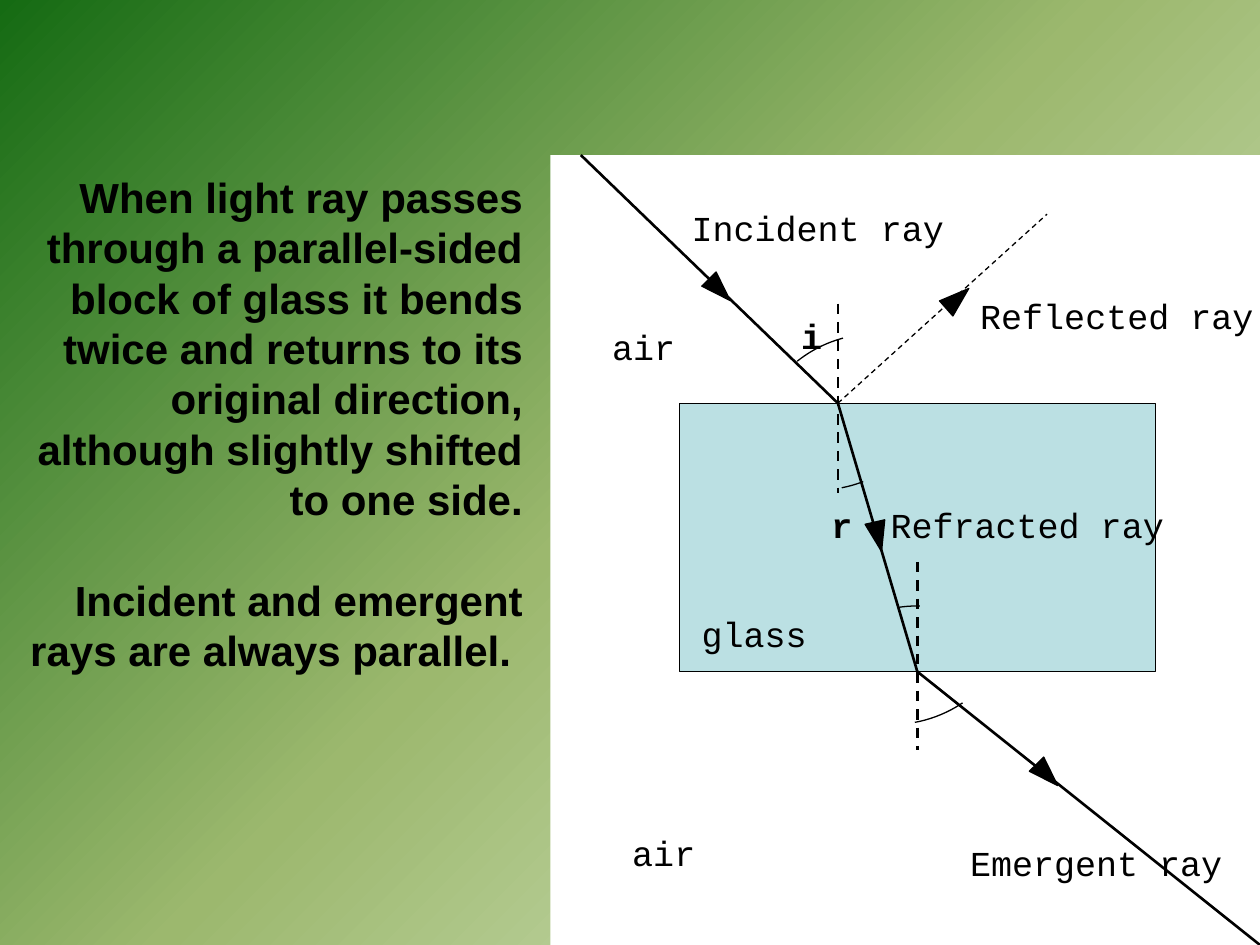
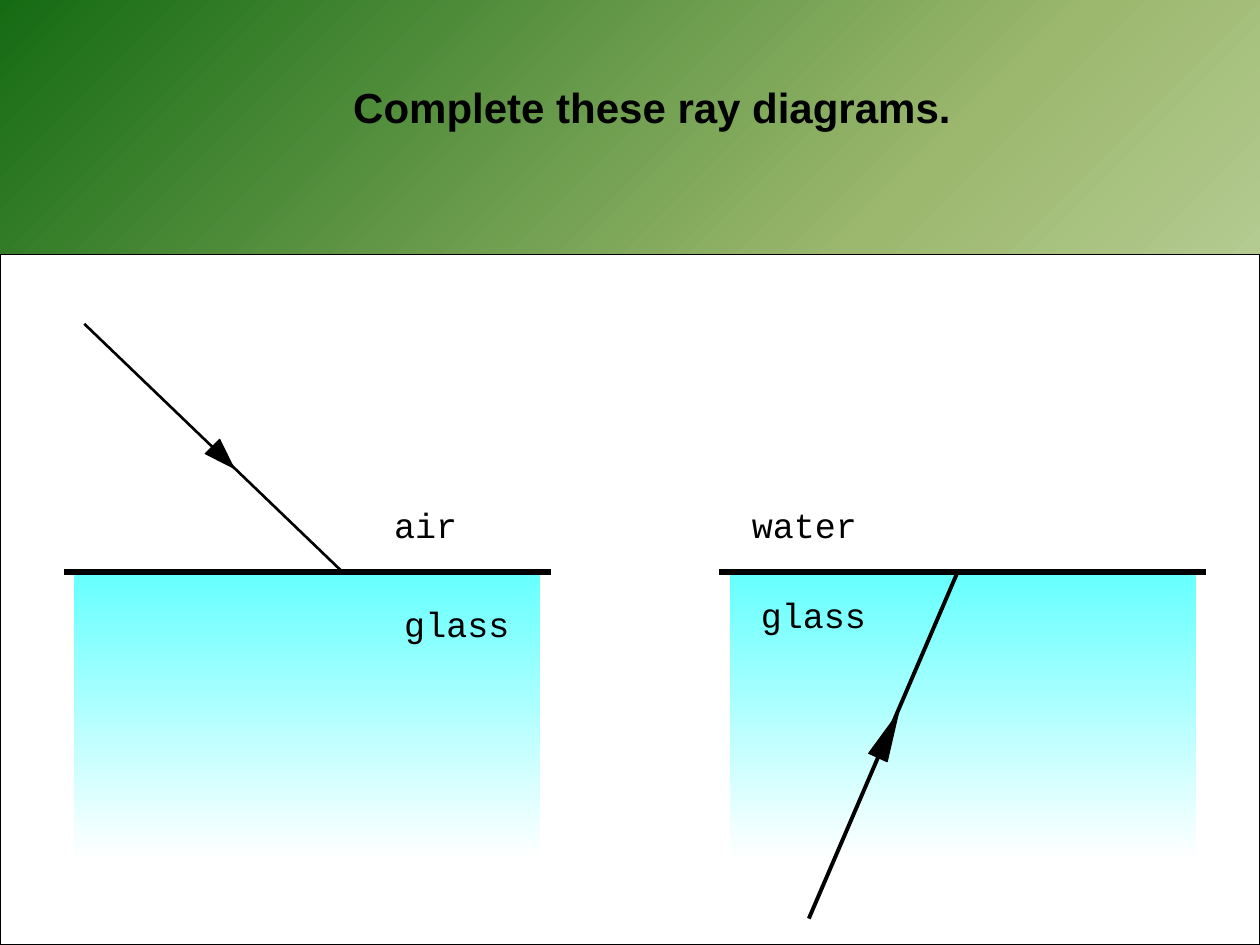
from lxml import etree
from pptx import Presentation
from pptx.dml.color import RGBColor
from pptx.enum.dml import MSO_LINE
from pptx.enum.shapes import MSO_CONNECTOR, MSO_SHAPE
from pptx.enum.text import MSO_ANCHOR, MSO_AUTO_SIZE, PP_ALIGN
from pptx.oxml import parse_xml
from pptx.oxml.ns import nsdecls, qn
from pptx.util import Pt

BLACK = RGBColor(0x00, 0x00, 0x00)
WHITE = RGBColor(0xFF, 0xFF, 0xFF)
GLASS_BLUE = RGBColor(0xBB, 0xE0, 0xE3)
CYAN = RGBColor(0x66, 0xFF, 0xFF)
PALE_GREEN = RGBColor(0xDD, 0xEB, 0xCF)
SAGE = RGBColor(0x9C, 0xB8, 0x6E)
DARK_GREEN = RGBColor(0x15, 0x6B, 0x13)

TEXT_FONT, LABEL_FONT = "Arial", "Courier New"
STRAIGHT = MSO_CONNECTOR.STRAIGHT
DASH = MSO_LINE.DASH
RECTANGLE, TRIANGLE, ARC = MSO_SHAPE.RECTANGLE, MSO_SHAPE.ISOSCELES_TRIANGLE, MSO_SHAPE.ARC
TOP = MSO_ANCHOR.TOP
NO_AUTOFIT = MSO_AUTO_SIZE.NONE
RIGHT, CENTER = PP_ALIGN.RIGHT, PP_ALIGN.CENTER

SLIDE_WIDTH, SLIDE_HEIGHT = 720, 540
CONTENT_LAYOUT, TITLE_ONLY_LAYOUT = 1, 5
BOTTOM_SIDE = 2
LINE_HEIGHT = 28.8
ARC_RADIUS = 72


class Canvas:
    """Draws on a slide, in points from the given corner."""

    def __init__(self, slide, left, top):
        self.shapes = slide.shapes
        self.left, self.top = left, top

    def place(self, x, y):
        return Pt(self.left + x), Pt(self.top + y)

    def shape(self, kind, x, y, width, height, fill=None, line=None):
        shape = self.shapes.add_shape(kind, *self.place(x, y), Pt(width), Pt(height))
        shape.shadow.inherit = False
        if fill is None:
            shape.fill.background()
        else:
            shape.fill.solid()
            shape.fill.fore_color.rgb = fill
        if line is None:
            shape.line.fill.background()
        else:
            shape.line.color.rgb = line
            shape.line.width = Pt(0.75)
        return shape

    def line(self, start, end, width=1.5, dash=None):
        line = self.shapes.add_connector(STRAIGHT, *self.place(*start), *self.place(*end))
        line.line.color.rgb = BLACK
        line.line.width = Pt(width)
        if dash is not None:
            line.line.dash_style = dash
        etree.SubElement(line._element.spPr, qn("a:effectLst"))
        return line

    def arrowhead(self, x, y, rotation, height=17.2):
        self.shape(TRIANGLE, x, y, 11.5, height, BLACK, BLACK).rotation = rotation

    def angle_arc(self, center_x, center_y, start, end):
        arc = self.shape(ARC, center_x - ARC_RADIUS, center_y - ARC_RADIUS,
                         2 * ARC_RADIUS, 2 * ARC_RADIUS, line=BLACK)
        # Angles are stored in 1/60000 degree, adjustments in units of 100000
        arc.adjustments[0] = start * 0.6
        arc.adjustments[1] = end * 0.6

    def label(self, text, x, y, width=181.4, bold=False):
        box = self.shapes.add_textbox(*self.place(x, y), Pt(width), Pt(31))
        frame = box.text_frame
        frame.word_wrap = True
        frame.margin_top = Pt(6.5)
        paragraph = frame.paragraphs[0]
        paragraph.text = text
        set_font(paragraph, LABEL_FONT, 20, bold)


def set_font(paragraph, name, size, bold):
    font = paragraph.font
    font.name, font.size, font.bold = name, Pt(size), bold
    font.color.rgb = BLACK


def set_background(master):
    """Diagonal green gradient shared by all slides."""
    master.background.fill.gradient()
    gradient = next(master._element.iter(qn("p:bgPr"))).find(qn("a:gradFill"))
    stops = "".join(
        f'<a:gs pos="{position}"><a:srgbClr val="{color}"/></a:gs>'
        for position, color in ((0, PALE_GREEN), (50000, SAGE), (100000, DARK_GREEN)))
    gradient.getparent().replace(gradient, parse_xml(
        f'<a:gradFill rotWithShape="1" {nsdecls("a")}><a:gsLst>{stops}</a:gsLst>'
        '<a:path path="circle"><a:fillToRect l="100000" t="100000"/></a:path></a:gradFill>'))


def fill_placeholder(placeholder, texts, left, top, width, height, alignment):
    placeholder.left, placeholder.top = Pt(left), Pt(top)
    placeholder.width, placeholder.height = Pt(width), Pt(height)
    frame = placeholder.text_frame
    frame.text = "\n".join(texts)
    frame.word_wrap = True
    frame.auto_size = NO_AUTOFIT
    frame.vertical_anchor = TOP
    for index, paragraph in enumerate(frame.paragraphs):
        paragraph.alignment = alignment
        paragraph.line_spacing = Pt(LINE_HEIGHT)
        paragraph.space_before = Pt(LINE_HEIGHT if index else 0)
        set_font(paragraph, TEXT_FONT, 24, True)
        properties = paragraph._p.get_or_add_pPr()
        properties.set("marL", "0")
        properties.set("indent", "0")
        # buNone must come before the default run properties
        properties.find(qn("a:defRPr")).addprevious(
            etree.Element(qn("a:buNone")))


def draw_glass_block(slide, left, top, width, height):
    """Ray passing through a parallel-sided block."""
    canvas = Canvas(slide, left, top)
    canvas.shape(RECTANGLE, 0, 0, width, height, WHITE)
    block = canvas.shape(RECTANGLE, 73.5, 141.8, 272.2, 153.4, GLASS_BLUE, BLACK)
    entry, leaving = (164.2, 141.8), (209.6, 295.2)

    # Rays
    canvas.line((17.3, 0), entry)
    refracted = canvas.line(entry, leaving)
    refracted.end_connect(block, BOTTOM_SIDE)
    emergent = canvas.line(leaving, (width, height))
    emergent.begin_connect(block, BOTTOM_SIDE)
    canvas.line(entry, (283.7, 33.8), 0.75, DASH)

    # Normals
    for x, start, end in ((entry[0], 84.9, 192.9), (leaving[0], 232.5, 339.8)):
        canvas.line((x, start), (x, end), dash=DASH)

    for x, y, rotation in ((90.8, 68.4, 135.4), (278, 345.6, 135.4),
                           (181.5, 209.5, 167.2), (226.8, 73.4, 48.5)):
        canvas.arrowhead(x, y, rotation)

    # Angle marks
    for center_x, center_y, start, end in (
            (185.8, 174.2, 231.5, 255), (152.7, 119.5, 68.8, 79),
            (209.6, 329.7, 260.8, 271.2), (195.2, 253.4, 56, 79.6)):
        canvas.angle_arc(center_x, center_y, start, end)
    canvas.label("i", 136.1, 84.9, 28, True)
    canvas.label("r", 153.4, 192.9, 28, True)

    for text, x, y in (
            ("Incident ray", 73.5, 23), ("Emergent ray", 232.6, 385.9),
            ("Refracted ray", 187.2, 192.9), ("Reflected ray", 238.4, 73.4),
            ("air", 28.1, 90.7), ("air", 39.6, 380.1), ("glass", 79.2, 254.8)):
        canvas.label(text, x, y)


def draw_glass_surface(slide, left, surface, labels, ray, ray_width, head):
    """Ray meeting a glass surface; heights are measured from the surface."""
    canvas = Canvas(slide, left, surface)
    glass = canvas.shape(RECTANGLE, 5.8, 0, 266.4, 164.2, CYAN)
    glass.fill.gradient()
    glass.fill.gradient_angle = 270
    for stop, color, position in zip(glass.fill.gradient_stops, (CYAN, WHITE), (0, 1)):
        stop.color.rgb = color
        stop.position = position
    canvas.line((0, 0), (278, 0), 3)
    canvas.line(*ray, ray_width)
    canvas.arrowhead(*head)
    for text, x, y in labels:
        canvas.label(text, x, y)


def add_block_slide(presentation):
    slide = presentation.slides.add_slide(presentation.slide_layouts[CONTENT_LAYOUT])
    title = slide.shapes.title._element
    title.getparent().remove(title)
    fill_placeholder(slide.placeholders[1], (
        "When light ray passes through a parallel-sided block of glass it bends twice "
        "and returns to its original direction, although slightly shifted to one side.",
        "Incident and emergent rays are always parallel. "), 0, 94.3, 306, 298, RIGHT)
    draw_glass_block(slide, 314.6, 88.6, 405.4, 451.4)


def add_exercise_slide(presentation):
    slide = presentation.slides.add_slide(presentation.slide_layouts[TITLE_ONLY_LAYOUT])
    fill_placeholder(slide.shapes.title, ("Complete these ray diagrams.",),
                     121.7, 43.2, 501.8, 36, CENTER)
    Canvas(slide, 0, 145.4).shape(RECTANGLE, 0, 0, SLIDE_WIDTH, 394.6, WHITE, BLACK)
    draw_glass_surface(slide, 36.7, 326.9,
                       (("air", 181.4, -45.4), ("glass", 187.2, 10.8)),
                       ((11.5, -141.8), (159.1, 0)), 1.5, (85, -74.2, 135.4))
    draw_glass_surface(slide, 411.1, 326.9,
                       (("water", 11.5, -45.4), ("glass", 16.6, 5.8)),
                       ((51.1, 198), (136.1, 0)), 2.25, (90.7, 79.2, 24.6, 28))


def main():
    presentation = Presentation()
    presentation.slide_width, presentation.slide_height = Pt(SLIDE_WIDTH), Pt(SLIDE_HEIGHT)
    set_background(presentation.slide_master)
    add_block_slide(presentation)
    add_exercise_slide(presentation)
    presentation.save("out.pptx")


if __name__ == "__main__":
    main()
